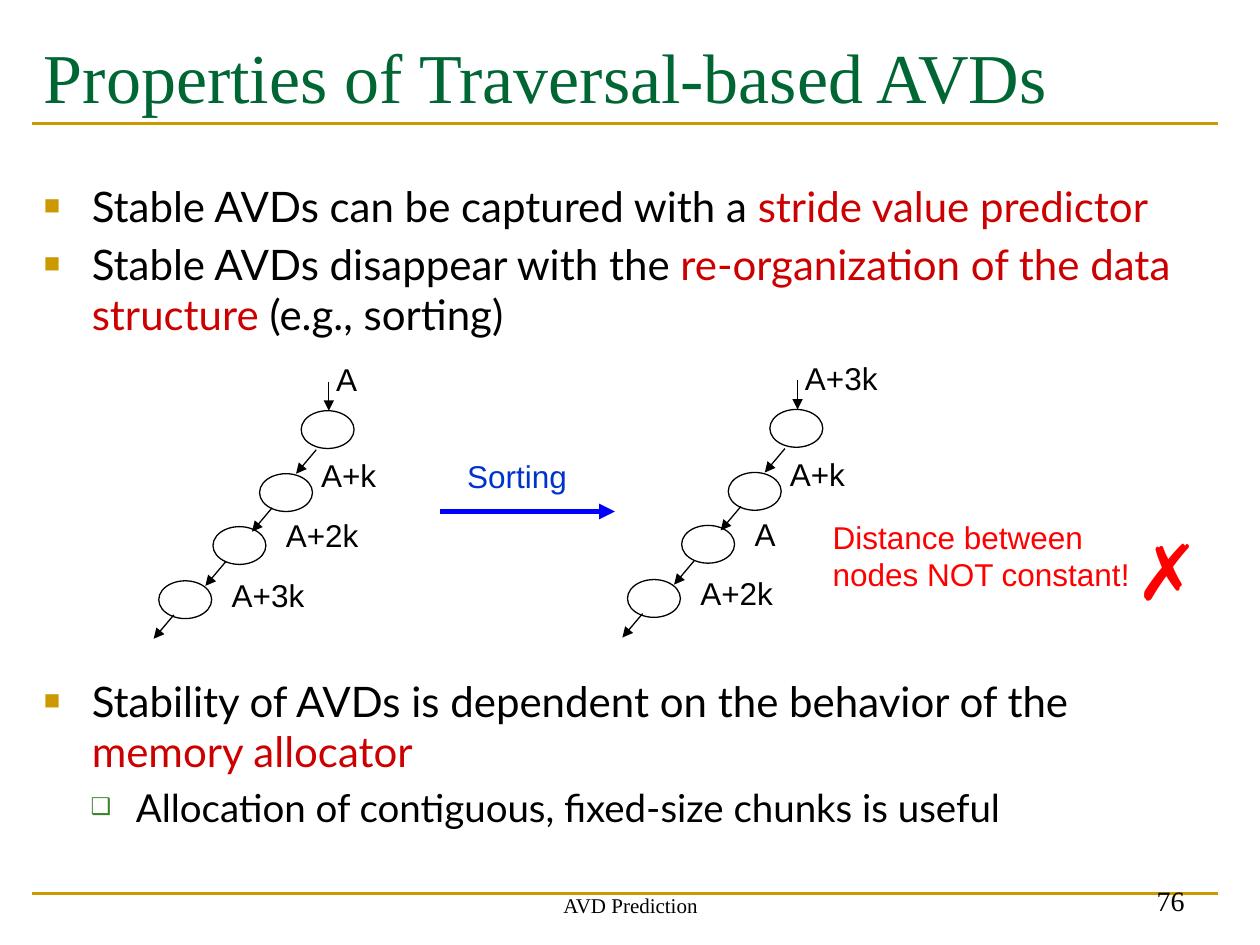
from dataclasses import dataclass

from lxml import etree
from pptx import Presentation
from pptx.dml.color import RGBColor
from pptx.enum.shapes import MSO_CONNECTOR, MSO_SHAPE
from pptx.enum.text import MSO_ANCHOR, PP_ALIGN
from pptx.oxml.ns import qn
from pptx.slide import Slide
from pptx.util import Inches, Pt

STRAIGHT = MSO_CONNECTOR.STRAIGHT
ELLIPSE = MSO_SHAPE.OVAL
TOP, BOTTOM = MSO_ANCHOR.TOP, MSO_ANCHOR.BOTTOM
LEFT, CENTER, RIGHT = PP_ALIGN.LEFT, PP_ALIGN.CENTER, PP_ALIGN.RIGHT

BLACK, GOLD, CRIMSON = "000000", "CC9900", "CC0000"
RED, GREEN, BLUE = "FF0000", "006633", "0000FF"
BULLETS = [
    ("■", GOLD, 65, 0.38, 0.38, 24),
    ("❑", "3B812F", 60, 0.73, 0.36, 22),
]
NODES = [
    ((1.17, 0.23), (1.29, 0.54), (1.35, -0.22)),
    ((0.84, 0.73), (0.94, 1.00), (1.23, 0.54)),
    ((0.47, 1.15), (0.57, 1.43), (0.95, 1.02)),
    ((0.04, 1.58), (0.16, 1.85), (0.52, 1.49)),
]


def color(value):
    return RGBColor.from_string(value)


@dataclass
class SlideBuilder:
    """Holds the slide and its fonts, and draws each kind of element."""

    slide: Slide
    serif: str = "Times New Roman"
    body: str = "Lato"
    sans: str = "Arial"

    def run(self, paragraph, text, font, size, fill):
        run = paragraph.add_run()
        run.text = text
        run.font.name = font
        run.font.size = Pt(size)
        run.font.color.rgb = color(fill)

    def frame(self, box, anchor=TOP, wrap=True, shapes=None):
        shape = (shapes or self.slide.shapes).add_textbox(*map(Inches, box))
        shape.text_frame.word_wrap = wrap
        shape.text_frame.vertical_anchor = anchor
        return shape.text_frame

    def text(self, box, lines, font, size, fill=BLACK, align=LEFT,
             anchor=TOP, wrap=True, shapes=None):
        frame = self.frame(box, anchor, wrap, shapes)
        for index, line in enumerate(lines):
            paragraph = frame.add_paragraph() if index else frame.paragraphs[0]
            paragraph.alignment = align
            self.run(paragraph, line, font, size, fill)

    def bullets(self, box, items):
        frame = self.frame(box)
        for index, (level, runs) in enumerate(items):
            character, bullet_color, scale, margin, hanging, size = BULLETS[level]
            paragraph = frame.add_paragraph() if index else frame.paragraphs[0]
            paragraph.level = level
            paragraph.space_before = Pt(4.5 if index else 0)
            properties = paragraph._p.get_or_add_pPr()
            properties.set("marL", str(Inches(margin)))
            properties.set("indent", str(-Inches(hanging)))
            fill = etree.SubElement(properties, qn("a:buClr"))
            etree.SubElement(fill, qn("a:srgbClr"), val=bullet_color)
            etree.SubElement(properties, qn("a:buSzPct"), val=str(scale * 1000))
            etree.SubElement(properties, qn("a:buFont"), typeface=self.sans)
            etree.SubElement(properties, qn("a:buChar"), char=character)
            for text, text_color in runs:
                self.run(paragraph, text, self.body, size, text_color)

    def line(self, start, end, fill=BLACK, width=0.75, arrow=False, shapes=None):
        connector = (shapes or self.slide.shapes).add_connector(
            STRAIGHT, *map(Inches, (*start, *end)))
        connector.line.color.rgb = color(fill)
        connector.line.width = Pt(width)
        if arrow:
            outline = connector.line._get_or_add_ln()
            etree.SubElement(outline, qn("a:tailEnd"), type="triangle")
        etree.SubElement(connector._element.spPr, qn("a:effectLst"))

    def node(self, left, top, shapes):
        shape = shapes.add_shape(
            ELLIPSE, *map(Inches, (left, top, 0.42, 0.3)))
        shape.shadow.inherit = False
        shape.fill.background()
        shape.line.color.rgb = color(BLACK)
        shape.line.width = Pt(0.75)

    def linked_list(self, left, top, labels):
        shapes = self.slide.shapes.add_group_shape().shapes
        self.line((left + 1.39, top), (left + 1.39, top + 0.23),
                  arrow=True, shapes=shapes)
        for (node, link, caption), label in zip(NODES, labels):
            self.node(left + node[0], top + node[1], shapes)
            x, y = left + link[0], top + link[1]
            self.line((x, y), (x - 0.16, y + 0.19), arrow=True, shapes=shapes)
            self.text((left + caption[0], top + caption[1], 0.85, 0.4),
                      [label], self.sans, 18, shapes=shapes)


def main():
    presentation = Presentation()
    presentation.slide_width = Inches(10)
    presentation.slide_height = Inches(7.5)
    slide = presentation.slides.add_slide(presentation.slide_layouts[6])
    builder = SlideBuilder(slide)

    for y in (7.09, 0.98):
        builder.line((0.25, y), (9.67, y), GOLD, 1.5)
    builder.text((3.42, 6.83, 3.17, 0.5), ["AVD Prediction"], builder.serif, 12,
                 align=CENTER, anchor=BOTTOM)
    builder.text((7.17, 6.83, 2.33, 0.5), ["76"], builder.serif, 16,
                 align=RIGHT, anchor=BOTTOM)
    builder.text((0.25, 0.22, 9.42, 1.12), ["Properties of Traversal-based AVDs"],
                 builder.serif, 40, GREEN)

    builder.bullets((0.25, 1.38, 9.42, 1.4), [
        (0, [("Stable AVDs can be captured with a ", BLACK),
             ("stride value predictor", CRIMSON)]),
        (0, [("Stable AVDs disappear with the ", BLACK),
             ("re-organization of the data structure", CRIMSON),
             (" (e.g., sorting)", BLACK)]),
    ])
    builder.bullets((0.25, 5.31, 9.42, 1.5), [
        (0, [("Stability of AVDs is dependent on the behavior of the ", BLACK),
             ("memory allocator", CRIMSON)]),
        (1, [("Allocation of contiguous, fixed-size chunks is useful", BLACK)]),
    ])

    builder.linked_list(1.22, 3.03, ["A", "A+k", "A+2k", "A+3k"])
    builder.linked_list(4.94, 3.02, ["A+3k", "A+k", "A", "A+2k"])
    builder.line((3.49, 4.06), (4.88, 4.06), BLUE, 3, arrow=True)
    builder.text((3.61, 3.58, 0.99, 0.4), ["Sorting"], builder.sans, 18,
                 "0033CC", wrap=False)
    builder.text((6.51, 4.06, 2.56, 0.7),
                 ["Distance between", "nodes NOT constant!"],
                 builder.sans, 18, RED, wrap=False)
    builder.text((8.91, 4.11, 0.82, 0.83), ["✗"], builder.sans, 44, RED)

    presentation.save("out.pptx")


if __name__ == "__main__":
    main()
